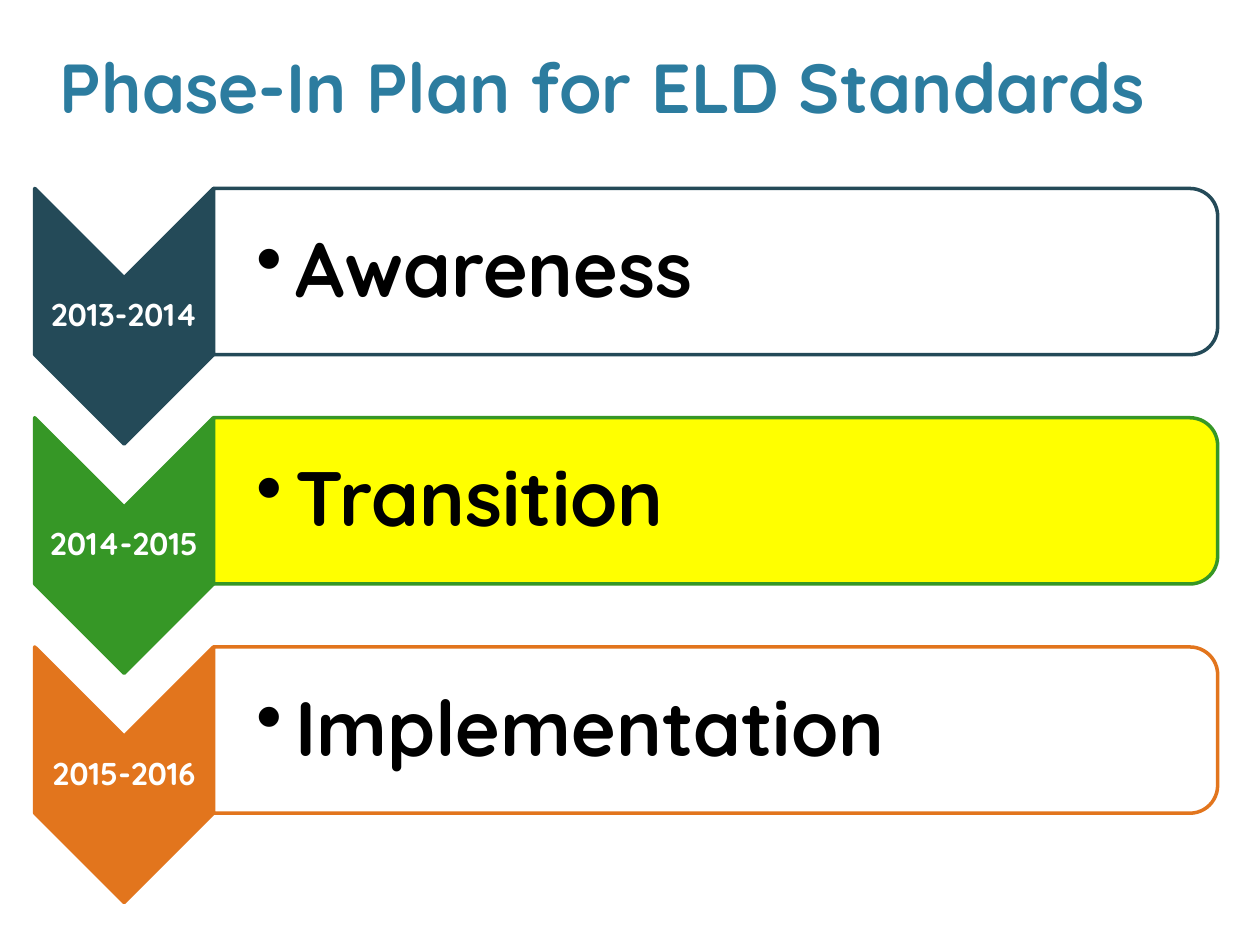
from dataclasses import dataclass

from lxml import etree
from pptx import Presentation
from pptx.dml.color import RGBColor
from pptx.enum.shapes import MSO_SHAPE
from pptx.enum.text import MSO_ANCHOR, PP_ALIGN
from pptx.oxml.ns import qn
from pptx.util import Pt

CHEVRON = MSO_SHAPE.CHEVRON
PANEL = MSO_SHAPE.ROUND_2_SAME_RECTANGLE
MIDDLE, BOTTOM = MSO_ANCHOR.MIDDLE, MSO_ANCHOR.BOTTOM
CENTER, LEFT = PP_ALIGN.CENTER, PP_ALIGN.LEFT


@dataclass(frozen=True)
class Theme:
    """Colours, font and type sizes of the slide."""
    face: str = "Quicksand"
    title: str = "2C7C9F"
    navy: str = "244A58"
    green: str = "369726"
    orange: str = "E2751D"
    white: str = "FFFFFF"
    yellow: str = "FFFF00"
    black: str = "000000"
    head: float = 39.6
    body: float = 44
    year: float = 18
    line: float = 2


THEME = Theme()
PHASES = [
    ("2013-2014", "Awareness", THEME.navy, THEME.white),
    ("2014-2015", "Transition", THEME.green, THEME.yellow),
    ("2015-2016", "Implementation", THEME.orange, THEME.white),
]


def add_turned(slide, kind, box, fill, line):
    """Add a shape turned a quarter clockwise so that it fills the box."""
    x, y, w, h = box
    shape = slide.shapes.add_shape(
        kind, Pt(x + (w - h) / 2), Pt(y + (h - w) / 2), Pt(h), Pt(w))
    shape.rotation = 90
    shape.shadow.inherit = False
    shape.fill.solid()
    shape.fill.fore_color.rgb = RGBColor.from_string(fill)
    shape.line.color.rgb = RGBColor.from_string(line)
    shape.line.width = Pt(THEME.line)


def add_text(slide, box, text, size, color, pads, anchor=MIDDLE,
             align=CENTER, bullet=False, space=0.9):
    """Add one bold paragraph in the box, with a hanging bullet if asked."""
    shape = slide.shapes.add_textbox(*map(Pt, box))
    frame = shape.text_frame
    frame.word_wrap = True
    frame.vertical_anchor = anchor
    (frame.margin_left, frame.margin_top,
     frame.margin_right, frame.margin_bottom) = map(Pt, pads)
    para = frame.paragraphs[0]
    para.text = text
    para.alignment = align
    para.line_spacing = space
    if bullet:
        para.level = 1
        props = para._p.get_or_add_pPr()
        props.set("marL", str(Pt(22.5)))
        props.set("indent", str(Pt(-22.5)))
        etree.SubElement(props, qn("a:buChar"), char="•")
    font = para.font
    font.name, font.size, font.bold = THEME.face, Pt(size), True
    font.color.rgb = RGBColor.from_string(color)


def add_title(slide, box):
    """Place the title, kept slightly left of the box centre."""
    add_text(slide, box, "Phase-In Plan for ELD Standards", THEME.head,
             THEME.title, (7.2, 3.6, 28, 3.6), anchor=BOTTOM, space=1)


def add_phase(slide, box, phase):
    """Place a year chevron and the panel to its right."""
    x, y, w, h = box
    year, name, color, fill = phase
    tag, tip = 102.2, 51.1
    add_turned(slide, CHEVRON, (x, y, tag, h + tip), color, color)
    add_text(slide, (x, y + tip, tag, h - tip), year, THEME.year,
             THEME.white, (0.7, 0.7, 0.7, 0.7))
    panel = (x + tag, y, w - tag, h)
    add_turned(slide, PANEL, panel, fill, color)
    add_text(slide, (x + tag, y + 5.4, w - tag - 4.5, h - 9.4), name,
             THEME.body, THEME.black, (24.5, 2.2, 2.2, 2.2),
             align=LEFT, bullet=True)


def add_plan(slide, box):
    """Stack the phases at equal steps down the box."""
    x, y, w, h = box
    step = h / len(PHASES)
    for i, phase in enumerate(PHASES):
        add_phase(slide, (x, y + i * step, w, 95), phase)


def main():
    """Build and save the slide."""
    deck = Presentation()
    deck.slide_width, deck.slide_height = Pt(720), Pt(540)
    slide = deck.slides.add_slide(deck.slide_layouts[6])
    add_title(slide, (13.7, 23.8, 681.8, 52.6))
    add_plan(slide, (19.8, 107.7, 676, 393))
    deck.save("out.pptx")


if __name__ == "__main__":
    main()
